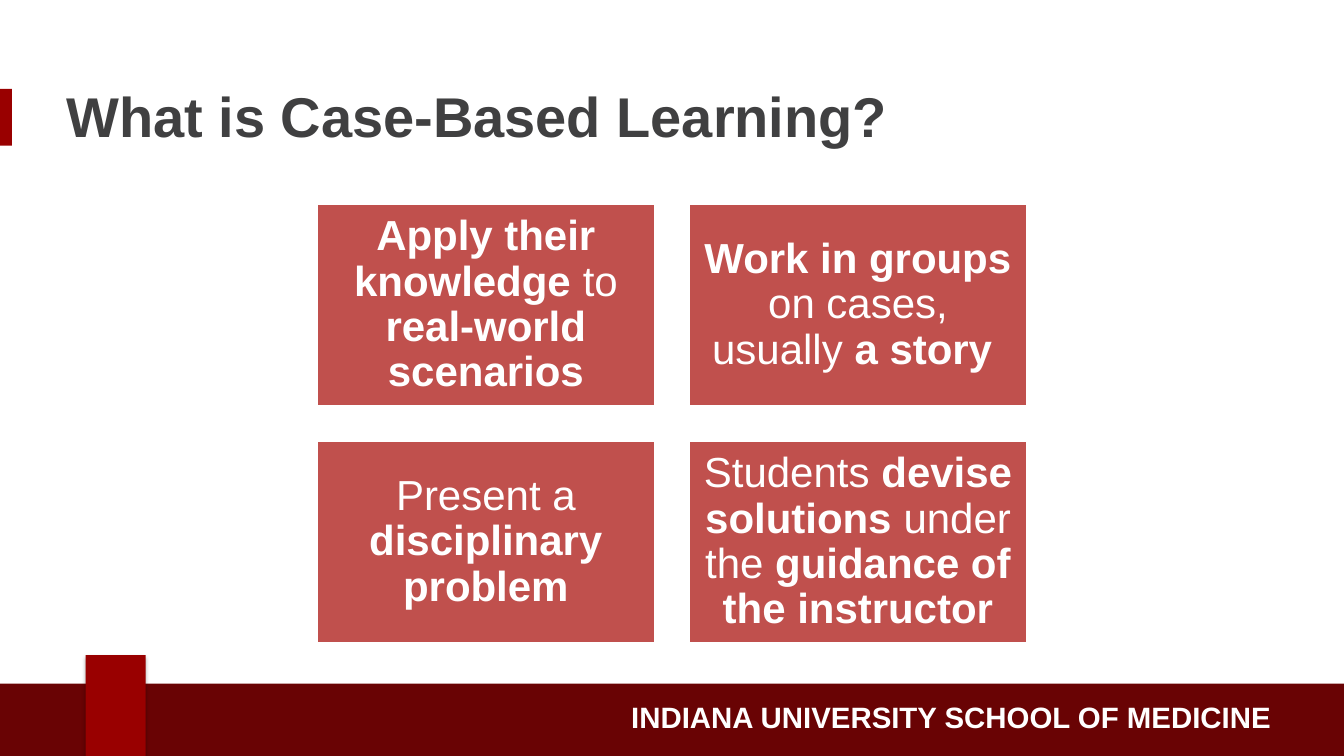
import lxml.etree
import pptx
import pptx.dml.color
import pptx.enum.shapes
import pptx.enum.text
import pptx.oxml.ns
import pptx.util

Pt = pptx.util.Pt
ALIGN = pptx.enum.text.PP_ALIGN
ANCHOR = pptx.enum.text.MSO_ANCHOR

COLORS = {
    "crimson": "990000",
    "band": "690304",
    "card": "C0504D",
    "title": "404041",
    "white": "FFFFFF",
    "shadow": "000000",
}


def add_block(left, top, width, height, color):
    block = slide.shapes.add_shape(
        pptx.enum.shapes.MSO_SHAPE.RECTANGLE, Pt(left), Pt(top), Pt(width), Pt(height))
    block.shadow.inherit = False
    block.fill.solid()
    block.fill.fore_color.rgb = pptx.dml.color.RGBColor.from_string(COLORS[color])
    block.line.fill.background()
    return block


def write_text(shape, runs, size, color, align, anchor, insets):
    """Fill a shape with one paragraph of (text, bold) runs."""
    frame = shape.text_frame
    side, edge = (Pt(inset) for inset in insets)
    frame_format = {
        "word_wrap": True, "vertical_anchor": anchor,
        "margin_left": side, "margin_right": side,
        "margin_top": edge, "margin_bottom": edge,
    }
    for name, value in frame_format.items():
        setattr(frame, name, value)
    paragraph = frame.paragraphs[0]
    paragraph.alignment = align
    for text, bold in runs:
        run = paragraph.add_run()
        run.text = text
        for name, value in {"name": "Arial", "size": Pt(size), "bold": bold}.items():
            setattr(run.font, name, value)
        run.font.color.rgb = pptx.dml.color.RGBColor.from_string(COLORS[color])
    return paragraph


deck = pptx.Presentation()
deck.slide_width, deck.slide_height = Pt(960), Pt(540)
slide = deck.slides.add_slide(deck.slide_layouts[6])

# Accent beside the title
add_block(0, 63.5, 8.5, 40.5, "crimson")

# Footer band with the school name
add_block(0, 488.3, 960, 51.7, "band")
school = slide.shapes.add_textbox(Pt(270.7), Pt(494), Pt(646.5), Pt(35.3))
write_text(school, [("INDIANA UNIVERSITY SCHOOL OF MEDICINE", True)],
           21, "white", ALIGN.RIGHT, ANCHOR.MIDDLE, (9.4, 5))

# Footer tab with a soft shadow
tab = add_block(61.2, 468, 42.8, 72, "crimson")
effects = tab._element.spPr.find(pptx.oxml.ns.qn("a:effectLst"))
shadow = lxml.etree.SubElement(
    effects, pptx.oxml.ns.qn("a:outerShdw"), blurRad=str(Pt(3.1)), dist=str(Pt(1.8)),
    dir="5400000", rotWithShape="0")
shade = lxml.etree.SubElement(shadow, pptx.oxml.ns.qn("a:srgbClr"), val=COLORS["shadow"])
lxml.etree.SubElement(shade, pptx.oxml.ns.qn("a:alpha"), val="35000")

# Title
title = slide.shapes.add_textbox(Pt(38), Pt(53.3), Pt(840), Pt(73.4))
write_text(title, [("What is Case-Based Learning?", True)],
           40, "title", ALIGN.LEFT, ANCHOR.TOP, (9.4, 5))

# Two-by-two grid of cards
CARD_WIDTH, CARD_HEIGHT, GAP = 241.6, 145, 24.2
GRID_LEFT, GRID_TOP = (960 - 2 * CARD_WIDTH - GAP) / 2, 145.6
CARDS = [
    [("Apply their knowledge ", True), ("to ", False), ("real-world scenarios", True)],
    [("Work in groups ", True), ("on cases, usually ", False), ("a story ", True)],
    [("Present a ", False), ("disciplinary problem", True)],
    [("Students ", False), ("devise solutions", True), (" under the ", False),
     ("guidance of the instructor", True)],
]
for index, statement in enumerate(CARDS):
    row, column = divmod(index, 2)
    card = add_block(GRID_LEFT + column * (CARD_WIDTH + GAP),
                     GRID_TOP + row * (CARD_HEIGHT + GAP),
                     CARD_WIDTH, CARD_HEIGHT, "card")
    card.line.color.rgb = pptx.dml.color.RGBColor.from_string(COLORS["white"])
    card.line.width = Pt(2)
    paragraph = write_text(card, statement, 30, "white", ALIGN.CENTER, ANCHOR.MIDDLE, (9, 9))
    paragraph.line_spacing = 0.9

deck.save("out.pptx")
